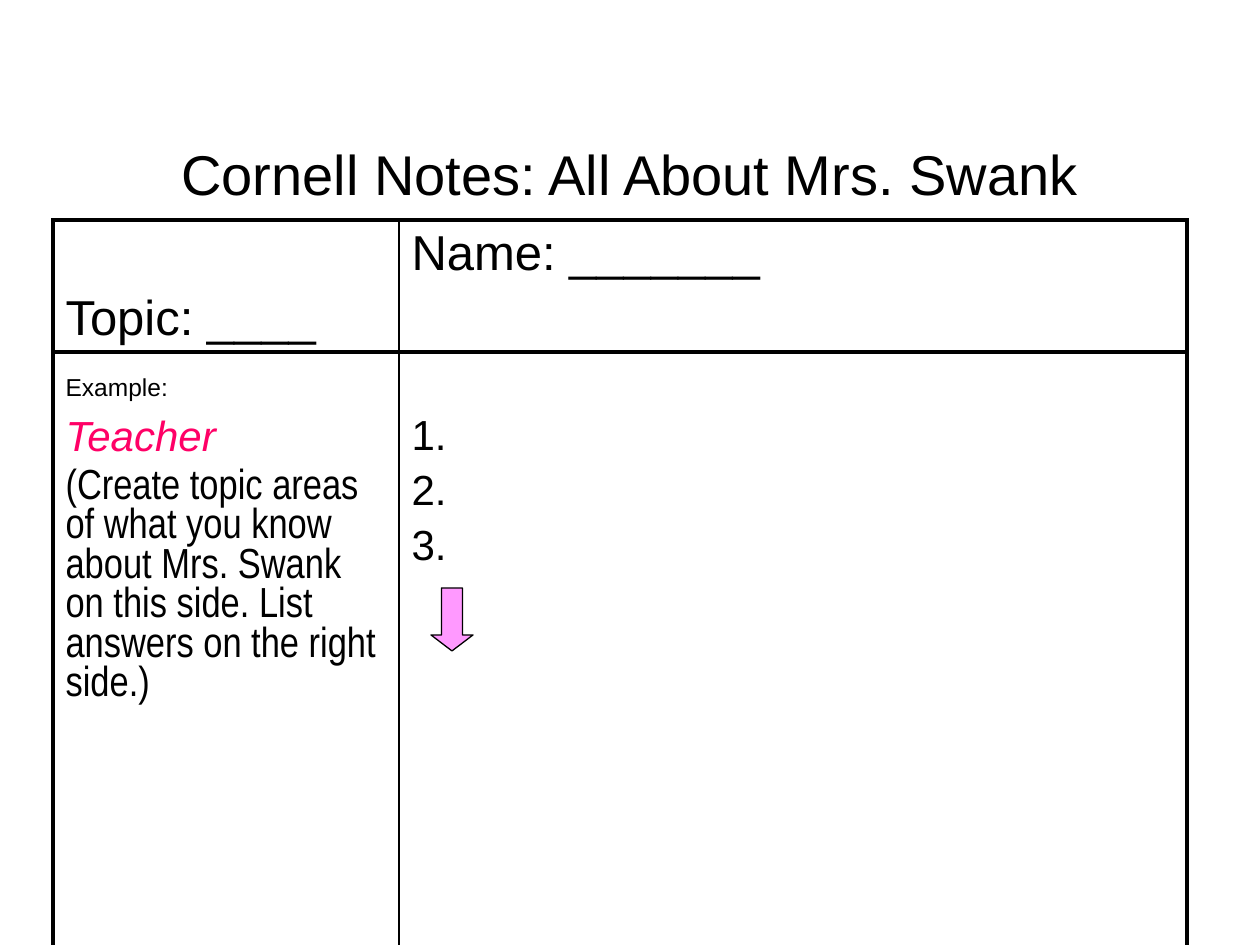
from lxml import etree
from pptx import Presentation
from pptx.dml.color import RGBColor
from pptx.enum.shapes import MSO_SHAPE
from pptx.enum.text import MSO_ANCHOR, PP_ALIGN
from pptx.oxml.ns import qn
from pptx.util import Emu, Pt

BLACK = RGBColor(0, 0, 0)
PINK = RGBColor(0xFF, 0x00, 0x66)
ORCHID = RGBColor(0xFF, 0x99, 0xFF)
TOP, MIDDLE, BOTTOM = MSO_ANCHOR.TOP, MSO_ANCHOR.MIDDLE, MSO_ANCHOR.BOTTOM
CENTER = PP_ALIGN.CENTER
DOWN_ARROW = MSO_SHAPE.DOWN_ARROW
THIN, THICK = Pt(1), Pt(2.25)


def px(count):
    return Emu(round(count * 914400 / 126))


def add_span(para, text, size, font="Arial", color=BLACK, italic=False):
    span = para.add_run()
    span.text = text
    span.font.size = Pt(size)
    span.font.name = font
    span.font.color.rgb = color
    span.font.italic = italic


deck = Presentation()
deck.slide_width, deck.slide_height = px(1260), px(945)
page = deck.slides.add_slide(deck.slide_layouts[6])

# Title
box = page.shapes.add_textbox(px(63), px(95), px(1134), px(157))
box.text_frame.word_wrap = True
box.text_frame.vertical_anchor = MIDDLE
title = box.text_frame.paragraphs[0]
title.alignment = CENTER
add_span(title, "Cornell Notes: All About Mrs. Swank", 32)

# Notes table
table = page.shapes.add_table(2, 2, px(53), px(220), px(1134), px(800)).table
table.first_row = table.horz_banding = False
for column, width in zip(table.columns, (346, 788)):
    column.width = px(width)
for row, height in zip(table.rows, (132, 668)):
    row.height = px(height)

# Each cell: row, column, anchor, top margin in px, paragraphs
# Each paragraph: space before in points, then its text and format
cells = [
    (0, 0, BOTTOM, 6, [(0, "Topic: ____", 28)]),
    (0, 1, TOP, 6, [(0, "Name: _______", 28)]),
    (1, 0, TOP, 22, [
        (0, "Example:", 14),
        (7, "Teacher", 24, "Arial", PINK, True),
        (4.5, "(Create topic areas of what you know about Mrs. Swank on this side. "
              "List answers on the right side.)", 24, "Arial Narrow"),
    ]),
    (1, 1, TOP, 61, [(0, "1.", 24), (4.5, "2.", 24), (4.5, "3.", 24)]),
]
for row, column, anchor, margin, lines in cells:
    cell = table.cell(row, column)
    cell.vertical_anchor = anchor
    cell.margin_top = px(margin)
    for index, (gap, *content) in enumerate(lines):
        frame = cell.text_frame
        para = frame.add_paragraph() if index else frame.paragraphs[0]
        para.space_before = Pt(gap)
        add_span(para, *content)

    # Thick outer frame and row rule, thin column rule
    borders = {
        "a:lnL": THIN if column else THICK,
        "a:lnR": THICK if column else THIN,
        "a:lnT": THICK,
        "a:lnB": THICK,
    }
    properties = cell._tc.get_or_add_tcPr()
    for side, width in borders.items():
        line = etree.SubElement(properties, qn(side), w=str(width))
        paint = etree.SubElement(line, qn("a:solidFill"))
        etree.SubElement(paint, qn("a:srgbClr"), val=str(BLACK))
    cell.fill.background()

# Arrow under the numbered answers
arrow = page.shapes.add_shape(DOWN_ARROW, px(431), px(588), px(42), px(63))
arrow.adjustments[0] = 0.5
arrow.adjustments[1] = 0.38
arrow.shadow.inherit = False
arrow.fill.solid()
arrow.fill.fore_color.rgb = ORCHID
arrow.line.color.rgb = BLACK
arrow.line.width = Pt(0.75)

deck.save("out.pptx")
